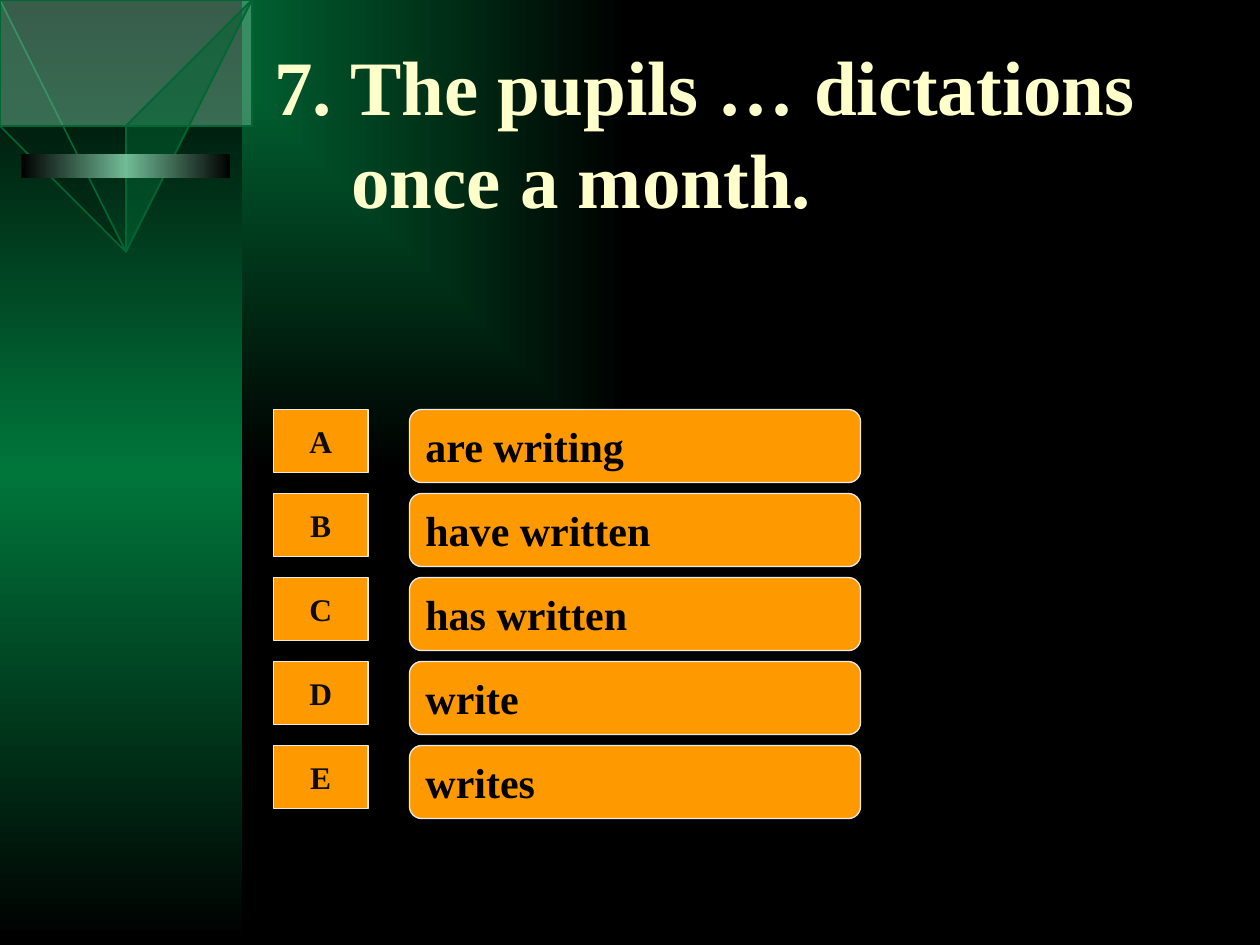
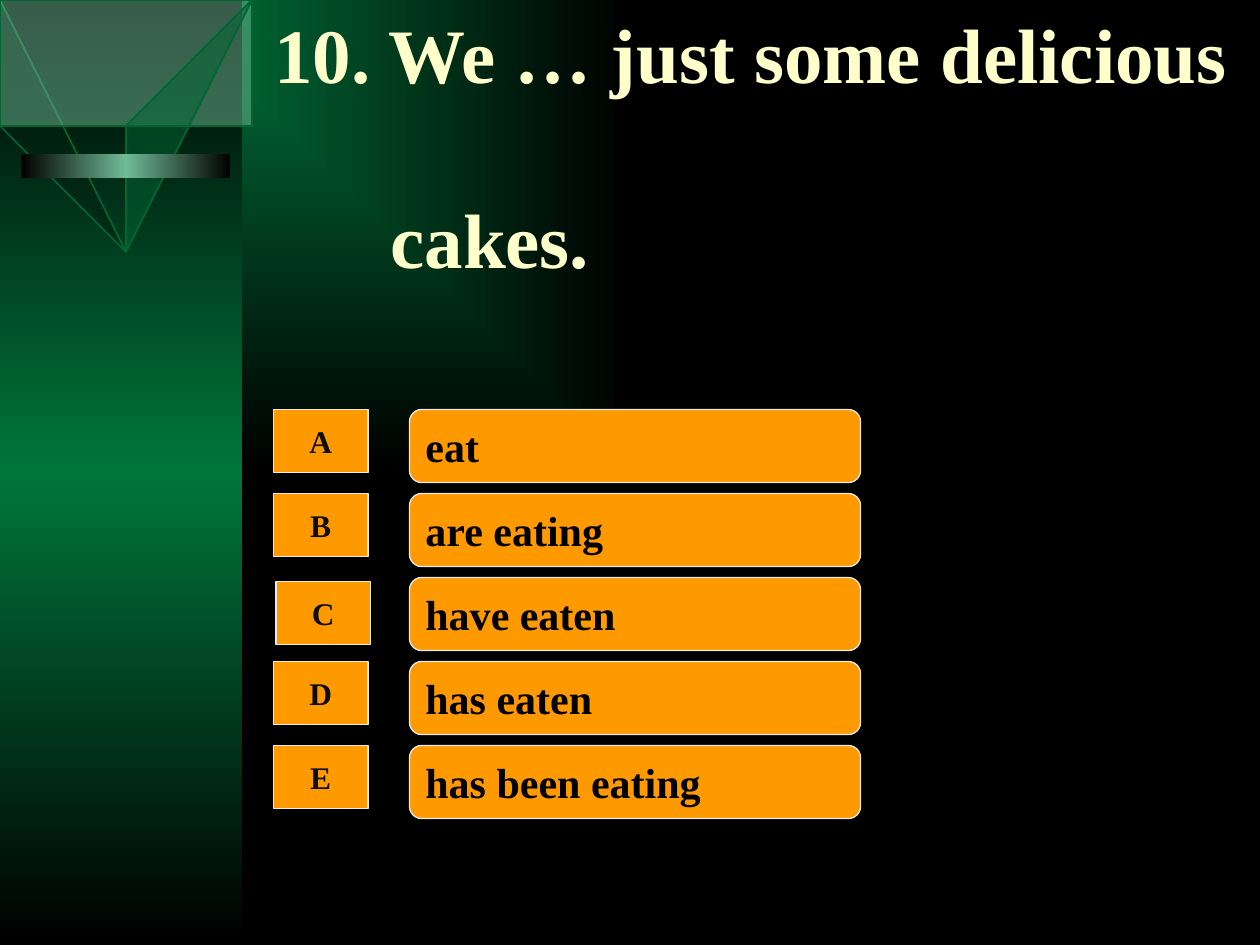
"""Builds two quiz slides, each with a question and five lettered answers."""
from dataclasses import dataclass

from lxml.etree import SubElement
from pptx import Presentation
from pptx.dml.color import RGBColor
from pptx.enum.shapes import MSO_SHAPE
from pptx.enum.text import MSO_ANCHOR, PP_ALIGN
from pptx.oxml import parse_xml
from pptx.oxml.ns import nsdecls, qn
from pptx.util import Inches, Pt

QUESTIONS = [
    {
        "title": ["7. The pupils … dictations", "once a month."],
        "title_box": (2.08, 0.25, 7.75, 1.58),
        "second_line": {"indent": 0.61, "space_before": 0},
        "answers": ["are writing", "have written", "has written", "write", "writes"],
        "nudges": {},
    },
    {
        "title": ["10. We … just some delicious", "cakes."],
        "title_box": (2.08, 0.36, 7.92, 1.58),
        "second_line": {"indent": 0.92, "space_before": 53},
        "answers": ["eat", "are eating", "have eaten", "has eaten", "has been eating"],
        "nudges": {"C": (0.02, 0.03)},
    },
]
LETTERS = "ABCDE"
WIDTH, HEIGHT = 10, 7.5
BAND_WIDTH = 1.92
BUTTON_LEFT, ANSWER_LEFT, FIRST_ROW, ROW_STEP = 2.17, 3.25, 3.25, 2 / 3
BUTTON_SIZE, ANSWER_SIZE = (0.75, 0.5), (3.58, 0.58)

LEFT_WING = [(0.17, 1.2), (0.17, 1.41), (0.72, 1.03), (0.72, 1.05), (0.64, 0.86)]
LEFT_LEG = [(0.98, 1.75), (0.98, 1.52), (0.48, 0.54), (0.26, 0.41)]
TOP_BAR = [(0.26, 0.41), (0.48, 0.54), (1.5, 0.54), (1.69, 0.41)]
EMBLEM_BAR = (0.17, 1.22, 1.66, 0.19)
LINEAR = '<a:lin ang="{}" scaled="0"/>'
ACROSS, DOWN = LINEAR.format(0), LINEAR.format(5400000)
FROM_CORNER = '<a:path path="rect"><a:fillToRect r="100000" b="100000"/></a:path>'


@dataclass(frozen=True)
class Theme:
    """Colours, font and type sizes of the slides."""
    font: str = "Times New Roman"
    black: str = "000000"
    green: str = "00763B"
    edge: str = "006633"
    shade: str = "002010"
    mint: str = "71BB96"
    title: str = "FFFFCC"
    orange: str = "FF9900"
    outline: str = "EAEAEA"
    letter: str = "0D0D0D"
    title_size: int = 44
    title_leading: int = 53
    answer_size: int = 24
    letter_size: int = 18


THEME = Theme()


def mirror(points, width):
    """Reflect points left to right inside the given width."""
    return [(width - x, y) for x, y in points]


def set_gradient(element, colors, direction):
    """Replace the first solid fill below an element with a gradient."""
    last = len(colors) - 1
    stops = "".join(
        f'<a:gs pos="{100000 * index // last}"><a:srgbClr val="{color}"/></a:gs>'
        for index, color in enumerate(colors))
    solid = next(element.iter(qn("a:solidFill")))
    solid.getparent().replace(solid, parse_xml(
        f'<a:gradFill {nsdecls("a")} rotWithShape="1">'
        f"<a:gsLst>{stops}</a:gsLst>{direction}</a:gradFill>"))


def style_shape(shape, fill, line=None, line_width=0.75, direction=ACROSS, opacity=None):
    """Give a shape a plain or gradient fill, an outline and no shadow."""
    shape.shadow.inherit = False
    colors = [fill] if isinstance(fill, str) else fill
    shape.fill.solid()
    shape.fill.fore_color.rgb = RGBColor.from_string(colors[0])
    if len(colors) > 1:
        set_gradient(shape.element, colors, direction)
    elif opacity is not None:
        color = next(shape.element.iter(qn("a:srgbClr")))
        SubElement(color, qn("a:alpha")).set("val", str(opacity * 1000))
    if line:
        shape.line.color.rgb = RGBColor.from_string(line)
        shape.line.width = Pt(line_width)
    else:
        shape.line.fill.background()


def add_box(shapes, kind, box, **style):
    """Add a styled preset shape."""
    shape = shapes.add_shape(kind, *map(Inches, box))
    style_shape(shape, **style)
    return shape


def add_outline(shapes, points, **style):
    """Add a styled closed freeform."""
    builder = shapes.build_freeform(*points[0], scale=Inches(1))
    builder.add_line_segments(points[1:], close=True)
    style_shape(builder.convert_to_shape(), **style)


def write_text(paragraph, text, *, size, color, align=PP_ALIGN.LEFT,
               leading=None, indent=0, space_before=None):
    """Write bold text into a paragraph."""
    if indent:
        paragraph._p.get_or_add_pPr().set("marL", str(Inches(indent)))
    paragraph.alignment = align
    if leading:
        paragraph.line_spacing = Pt(leading)
    if space_before:
        paragraph.space_before = Pt(space_before)
    run = paragraph.add_run()
    run.text = text
    run.font.name, run.font.size, run.font.bold = THEME.font, Pt(size), True
    run.font.color.rgb = RGBColor.from_string(color)


def prepare_frame(shape):
    """Return a wrapping, vertically centred text frame."""
    frame = shape.text_frame
    frame.word_wrap = True
    frame.vertical_anchor = MSO_ANCHOR.MIDDLE
    return frame


def add_backdrop(slide):
    """Draw the background, the side band and the triangle emblem."""
    slide.background.fill.solid()
    slide.background.fill.fore_color.rgb = RGBColor.from_string(THEME.green)
    set_gradient(slide.element, [THEME.green, THEME.black], FROM_CORNER)
    add_box(slide.shapes, MSO_SHAPE.RECTANGLE, (0, 0, BAND_WIDTH, HEIGHT),
            fill=[THEME.black, THEME.green, THEME.black], direction=DOWN)
    emblem = slide.shapes.add_group_shape().shapes
    add_outline(emblem, mirror(LEFT_WING, 2), fill=[THEME.black, THEME.green])
    add_outline(emblem, LEFT_WING, fill=[THEME.green, THEME.black])
    for points, color in ((LEFT_LEG, THEME.shade), (TOP_BAR, THEME.mint),
                          (mirror(LEFT_LEG, 1.95), THEME.edge)):
        add_outline(emblem, points, fill=color, opacity=50, line=THEME.edge, line_width=1)
    add_box(emblem, MSO_SHAPE.RECTANGLE, EMBLEM_BAR,
            fill=[THEME.black, THEME.mint, THEME.black])


def add_title(slide, question):
    """Write the question with its second line indented."""
    frame = prepare_frame(slide.shapes.add_textbox(*map(Inches, question["title_box"])))
    first, second = question["title"]
    style = {"size": THEME.title_size, "color": THEME.title, "leading": THEME.title_leading}
    write_text(frame.paragraphs[0], first, **style)
    write_text(frame.add_paragraph(), second, **style, **question["second_line"])


def add_answers(slide, question):
    """Place a lettered button and an answer on each row."""
    for row, (letter, answer) in enumerate(zip(LETTERS, question["answers"])):
        top = FIRST_ROW + row * ROW_STEP
        right, down = question["nudges"].get(letter, (0, 0))
        answer_box = add_box(slide.shapes, MSO_SHAPE.ROUNDED_RECTANGLE,
                             (ANSWER_LEFT, top, *ANSWER_SIZE),
                             fill=THEME.orange, line=THEME.outline)
        write_text(prepare_frame(answer_box).paragraphs[0], answer,
                   size=THEME.answer_size, color=THEME.black)
        button = add_box(slide.shapes, MSO_SHAPE.ACTION_BUTTON_CUSTOM,
                         (BUTTON_LEFT + right, top + down, *BUTTON_SIZE),
                         fill=THEME.orange, line=THEME.outline)
        write_text(prepare_frame(button).paragraphs[0], letter, align=PP_ALIGN.CENTER,
                   size=THEME.letter_size, color=THEME.letter)


def main():
    """Build and save the presentation."""
    presentation = Presentation()
    presentation.slide_width, presentation.slide_height = Inches(WIDTH), Inches(HEIGHT)
    for question in QUESTIONS:
        slide = presentation.slides.add_slide(presentation.slide_layouts[6])
        add_backdrop(slide)
        add_title(slide, question)
        add_answers(slide, question)
    presentation.save("out.pptx")


if __name__ == "__main__":
    main()
